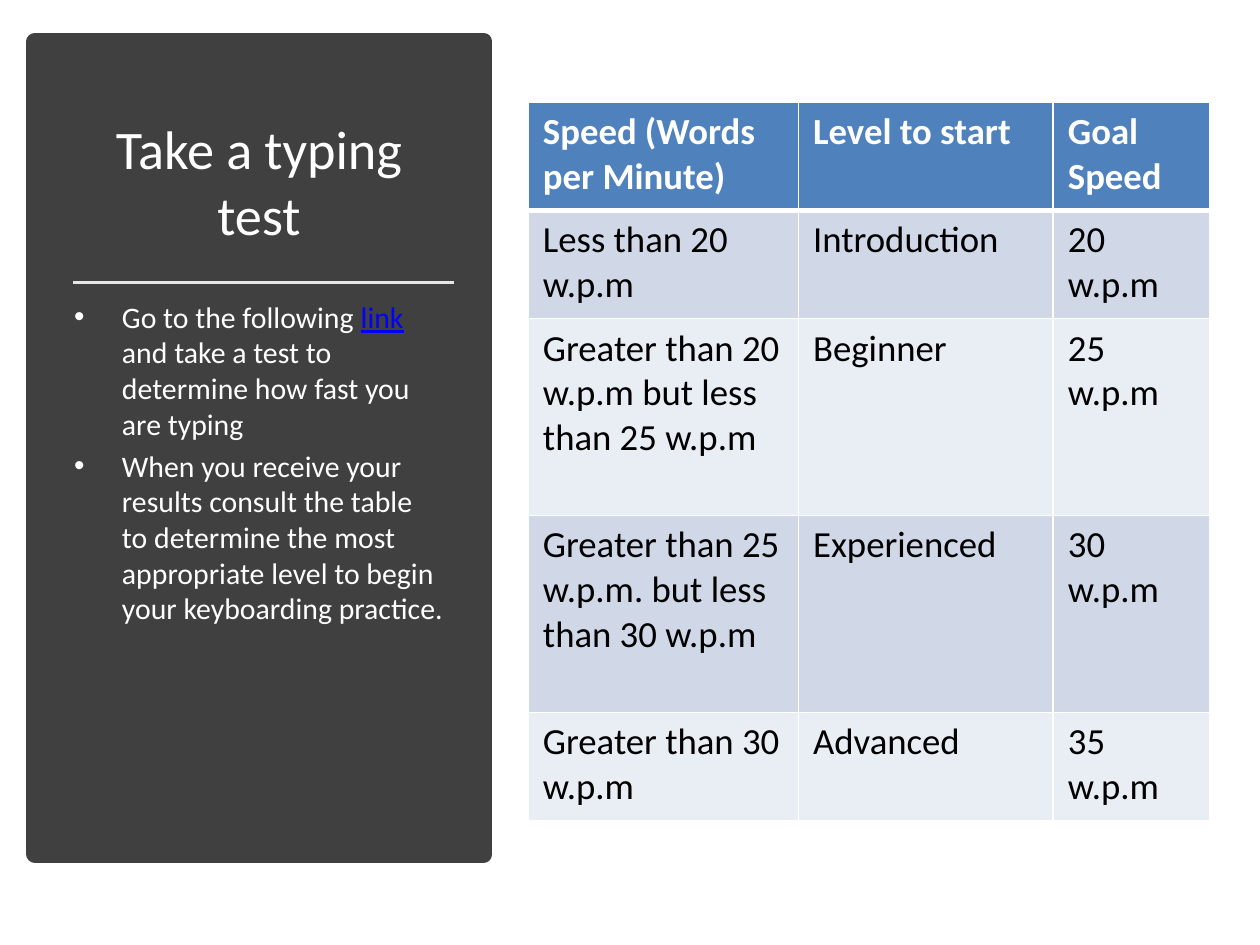
from pptx import Presentation
from pptx.dml.color import RGBColor
from pptx.enum.shapes import MSO_CONNECTOR as Conn, MSO_SHAPE as Shape
from pptx.enum.text import MSO_ANCHOR as Anchor, MSO_AUTO_SIZE as Fit, PP_ALIGN as Align
from pptx.oxml.ns import qn
from pptx.util import Pt
from lxml.etree import SubElement as Sub

WHITE, BLACK, DARK, PALE = "FFFFFF", "000000", "404040", "E7E6E6"
HEAD, BANDS, LINK = "4F81BD", ("D0D8E8", "E9EDF4"), "0000FF"

ROWS = [
    ("Speed (Words per Minute)", "Level to start", "Goal Speed"),
    ("Less than 20 w.p.m", "Introduction", "20 w.p.m"),
    ("Greater than 20 w.p.m but less than 25 w.p.m", "Beginner", "25 w.p.m"),
    ("Greater than 25 w.p.m. but less than 30 w.p.m", "Experienced", "30 w.p.m"),
    ("Greater than 30 w.p.m", "Advanced", "35 w.p.m"),
]
STEPS = [
    ["Go to the following ", "link",
     " and take a test to determine how fast you are typing"],
    ["When you receive your results consult the table to determine "
     "the most appropriate level to begin your keyboarding practice."],
]


def color(code):
    return RGBColor.from_string(code)


class Page:
    face = "Calibri"

    def __init__(self, deck):
        self.slide = deck.slides.add_slide(deck.slide_layouts[5])
        self.shapes = self.slide.shapes

    def style(self, par, size, code, bold=False):
        font = par.font
        font.name, font.size, font.bold = self.face, Pt(size), bold
        font.color.rgb = color(code)

    def panel(self, box, code, width):
        rect = self.shapes.add_shape(Shape.RECTANGLE, *map(Pt, box))
        rect.shadow.inherit = False
        rect.fill.solid()
        rect.fill.fore_color.rgb = rect.line.color.rgb = color(code)
        rect.line.width = Pt(width)
        # Keep the panel behind the title
        self.shapes.title.element.addprevious(rect.element)

    def title(self, text, box, size):
        head = self.shapes.title
        head.left, head.top, head.width, head.height = map(Pt, box)
        frame = head.text_frame
        frame.text = text
        frame.word_wrap, frame.auto_size = True, Fit.NONE
        frame.vertical_anchor = Anchor.MIDDLE
        par = frame.paragraphs[0]
        par.alignment = Align.CENTER
        self.style(par, size, WHITE)

    def rule(self, left, right, top, code, width):
        line = self.shapes.add_connector(
            Conn.STRAIGHT, Pt(left), Pt(top), Pt(right), Pt(top))
        line.line.color.rgb = color(code)
        line.line.width = Pt(width)
        Sub(line.element.spPr, qn("a:effectLst"))

    def bullets(self, items, box, size, indent):
        frame = self.shapes.add_textbox(*map(Pt, box)).text_frame
        frame.word_wrap = True
        for i, parts in enumerate(items):
            par = frame.add_paragraph() if i else frame.paragraphs[0]
            par.space_before = Pt(size * 0.2)
            props = par._p.get_or_add_pPr()
            props.set("marL", str(Pt(indent)))
            props.set("indent", str(-Pt(indent)))
            Sub(props, qn("a:buFont"), typeface="Arial")
            Sub(props, qn("a:buChar"), char="•")
            self.style(par, size, WHITE)
            for part in parts:
                run = par.add_run()
                run.text = part
                # Size and face sit on runs, as the link splits the text
                self.style(run, size, LINK if part == "link" else WHITE)
                run.font.underline = part == "link"

    def border(self, cell, widths):
        props = cell._tc.get_or_add_tcPr()
        for side, width in zip("LRTB", widths):
            line = Sub(props, qn(f"a:ln{side}"), w=str(Pt(width)))
            Sub(Sub(line, qn("a:solidFill")), qn("a:srgbClr"), val=WHITE)

    def table(self, rows, left, top, cols, highs, size):
        grid = self.shapes.add_table(
            len(rows), len(cols), Pt(left), Pt(top),
            Pt(sum(cols)), Pt(sum(highs))).table
        for col, wide in zip(grid.columns, cols):
            col.width = Pt(wide)
        for r, (row, high) in enumerate(zip(rows, highs)):
            grid.rows[r].height = Pt(high)
            for c, text in enumerate(row):
                cell = grid.cell(r, c)
                cell.text = text
                cell.margin_left = cell.margin_right = Pt(8.4)
                cell.margin_top = cell.margin_bottom = Pt(4.2)
                self.border(cell, (1, 1, 3 if r == 1 else 1, 3 if r == 0 else 1))
                cell.fill.solid()
                cell.fill.fore_color.rgb = color(BANDS[(r - 1) % 2] if r else HEAD)
                self.style(cell.text_frame.paragraphs[0], size,
                           BLACK if r else WHITE, bold=r == 0)


def main():
    deck = Presentation()
    deck.slide_width, deck.slide_height = Pt(720), Pt(540)
    page = Page(deck)

    # Left panel with title and steps
    page.panel((20.16, 23.76, 256.32, 464.4), DARK, 10)
    page.title("Take a typing test", (35.28, 50.4, 225.36, 105.84), 31)
    page.rule(41.76, 259.2, 161.28, PALE, 1.75)
    page.bullets(STEPS, (35.28, 167.04, 225.36, 297.36), 17, 27.36)

    # Speed table
    page.table(ROWS, 301.9, 58.3, (154.4, 145.6, 89.3),
               (61.9, 61.9, 112.5, 112.5, 61.9), 21)

    deck.save("out.pptx")


if __name__ == "__main__":
    main()
